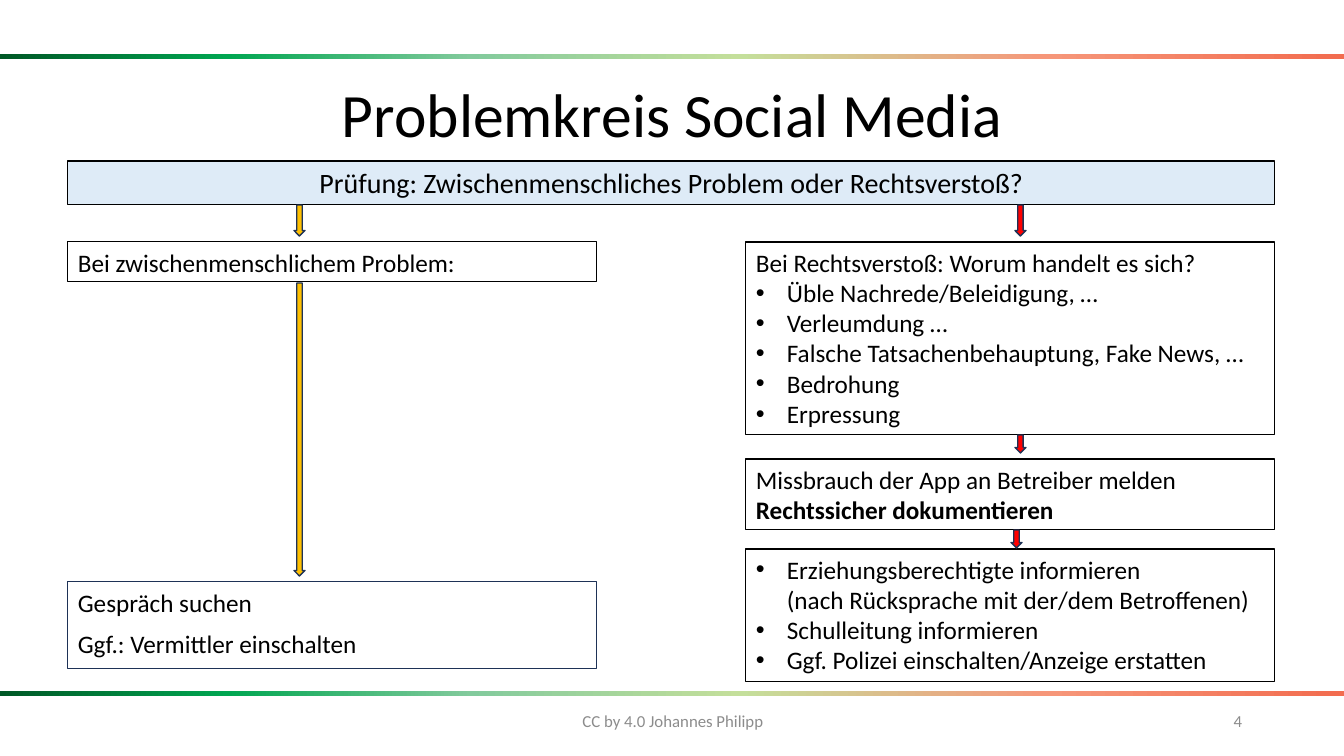
from lxml import etree
from pptx import Presentation
from pptx import util as u
from pptx.dml.color import RGBColor
from pptx.enum import shapes, text
from pptx.oxml.ns import qn

SCALE = 12192000 / 1344
FONT = "Calibri"
COLORS = {
    "text": "000000", "footer": "8C8C8C", "navy": "1E3256",
    "question": "DEEBF7", "talk": "FFC000", "legal": "FF0000",
}
BAND_STOPS = [(0, "005826"), (17, "00A651"), (35, "82CA9C"),
              (55, "C4DF9B"), (78, "F69679"), (100, "F26C4F")]
LEFT, RIGHT, COLUMN = 68, 746, 529


def px(*lengths):
    return [round(length * SCALE) for length in lengths]


def write(paragraph, words, size, color="text", bold=False):
    for index, line in enumerate(words.split("\n")):
        if index:
            paragraph.add_line_break()
        run = paragraph.add_run()
        run.text = line
        run.font.name = FONT
        run.font.size = u.Pt(size)
        run.font.bold = bold
        run.font.color.rgb = RGBColor.from_string(COLORS[color])


presentation = Presentation()
presentation.slide_width, presentation.slide_height = px(1344, 756)
slide = presentation.slides.add_slide(presentation.slide_layouts[5])

for top in (54, 691):
    band = slide.shapes.add_shape(shapes.MSO_SHAPE.RECTANGLE, *px(0, top, 1344, 5))
    band.shadow.inherit = False
    band.line.fill.background()
    band.fill.gradient()
    band.fill.gradient_angle = 0
    stops = band.fill._fill._gradFill.find(qn("a:gsLst"))
    for stop in list(stops):
        stops.remove(stop)
    for position, color in BAND_STOPS:
        stop = etree.SubElement(stops, qn("a:gs"), pos=str(position * 1000))
        etree.SubElement(stop, qn("a:srgbClr"), val=color)

title = slide.shapes.title
title.left, title.top, title.width, title.height = px(93, 73, 1159, 89)
title.text_frame.vertical_anchor = text.MSO_ANCHOR.MIDDLE
heading = title.text_frame.paragraphs[0]
heading.alignment = text.PP_ALIGN.CENTER
heading.line_spacing = 0.9
write(heading, "Problemkreis Social Media", 44)

footers = [
    (446, 454, text.PP_ALIGN.CENTER, "CC by 4.0 Johannes Philipp"),
    (950, 302, text.PP_ALIGN.RIGHT, "4"),
]
for left, width, alignment, words in footers:
    footer = slide.shapes.add_textbox(*px(left, 701, width, 40))
    footer.text_frame.word_wrap = True
    footer.text_frame.vertical_anchor = text.MSO_ANCHOR.MIDDLE
    paragraph = footer.text_frame.paragraphs[0]
    paragraph.alignment = alignment
    write(paragraph, words, 12, "footer")

PLAIN, BULLET, BOLD, SPACED, CENTERED = "plain", "bullet", "bold", "spaced", "centered"
boxes = [
    (LEFT, 161, 1207, 44, "question", "text", [
        (CENTERED, "Prüfung: Zwischenmenschliches Problem oder Rechtsverstoß?")]),
    (LEFT, 242, COLUMN, 40, None, "text", [
        (PLAIN, "Bei zwischenmenschlichem Problem:")]),
    (LEFT, 582, COLUMN, 87, None, "navy", [
        (PLAIN, "Gespräch suchen"),
        (SPACED, "Ggf.: Vermittler einschalten")]),
    (RIGHT, 242, COLUMN, 193, None, "text", [
        (PLAIN, "Bei Rechtsverstoß: Worum handelt es sich?"),
        (BULLET, "Üble Nachrede/Beleidigung, …"),
        (BULLET, "Verleumdung …"),
        (BULLET, "Falsche Tatsachenbehauptung, Fake News, …"),
        (BULLET, "Bedrohung"),
        (BULLET, "Erpressung")]),
    (RIGHT, 459, COLUMN, 71, None, "text", [
        (PLAIN, "Missbrauch der App an Betreiber melden"),
        (BOLD, "Rechtssicher dokumentieren")]),
    (RIGHT, 549, COLUMN, 133, None, "text", [
        (BULLET, "Erziehungsberechtigte informieren\n(nach Rücksprache mit der/dem Betroffenen)"),
        (BULLET, "Schulleitung informieren"),
        (BULLET, "Ggf. Polizei einschalten/Anzeige erstatten")]),
]
for left, top, width, height, fill, outline, lines in boxes:
    box = slide.shapes.add_shape(shapes.MSO_SHAPE.RECTANGLE, *px(left, top, width, height))
    box.shadow.inherit = False
    if fill:
        box.fill.solid()
        box.fill.fore_color.rgb = RGBColor.from_string(COLORS[fill])
    else:
        box.fill.background()
    box.line.color.rgb = RGBColor.from_string(COLORS[outline])
    box.line.width = u.Pt(0.75)
    frame = box.text_frame
    frame.word_wrap = True
    frame.vertical_anchor = text.MSO_ANCHOR.TOP
    for index, (style, words) in enumerate(lines):
        paragraph = frame.add_paragraph() if index else frame.paragraphs[0]
        paragraph.alignment = text.PP_ALIGN.CENTER if style == CENTERED else text.PP_ALIGN.LEFT
        if style == SPACED:
            paragraph.space_before = u.Pt(8)
        if style == BULLET:
            properties = paragraph._p.get_or_add_pPr()
            indent = px(31)[0]
            properties.set("marL", str(indent))
            properties.set("indent", str(-indent))
            etree.SubElement(properties, qn("a:buFont"), typeface="Arial")
            etree.SubElement(properties, qn("a:buChar"), char="•")
        write(paragraph, words, 20 if style == CENTERED else 18, bold=style == BOLD)

arrows = [
    (294, 205, 31, "talk"), (294, 283, 293, "talk"),
    (1015, 205, 31, "legal"), (1015, 435, 18, "legal"), (1011, 530, 18, "legal"),
]
for left, top, height, color in arrows:
    arrow = slide.shapes.add_shape(shapes.MSO_SHAPE.DOWN_ARROW, *px(left, top, 11, height))
    arrow.shadow.inherit = False
    arrow.fill.solid()
    arrow.fill.fore_color.rgb = RGBColor.from_string(COLORS[color])
    arrow.line.color.rgb = RGBColor.from_string(COLORS["navy"])
    arrow.line.width = u.Pt(1)

presentation.save("out.pptx")
